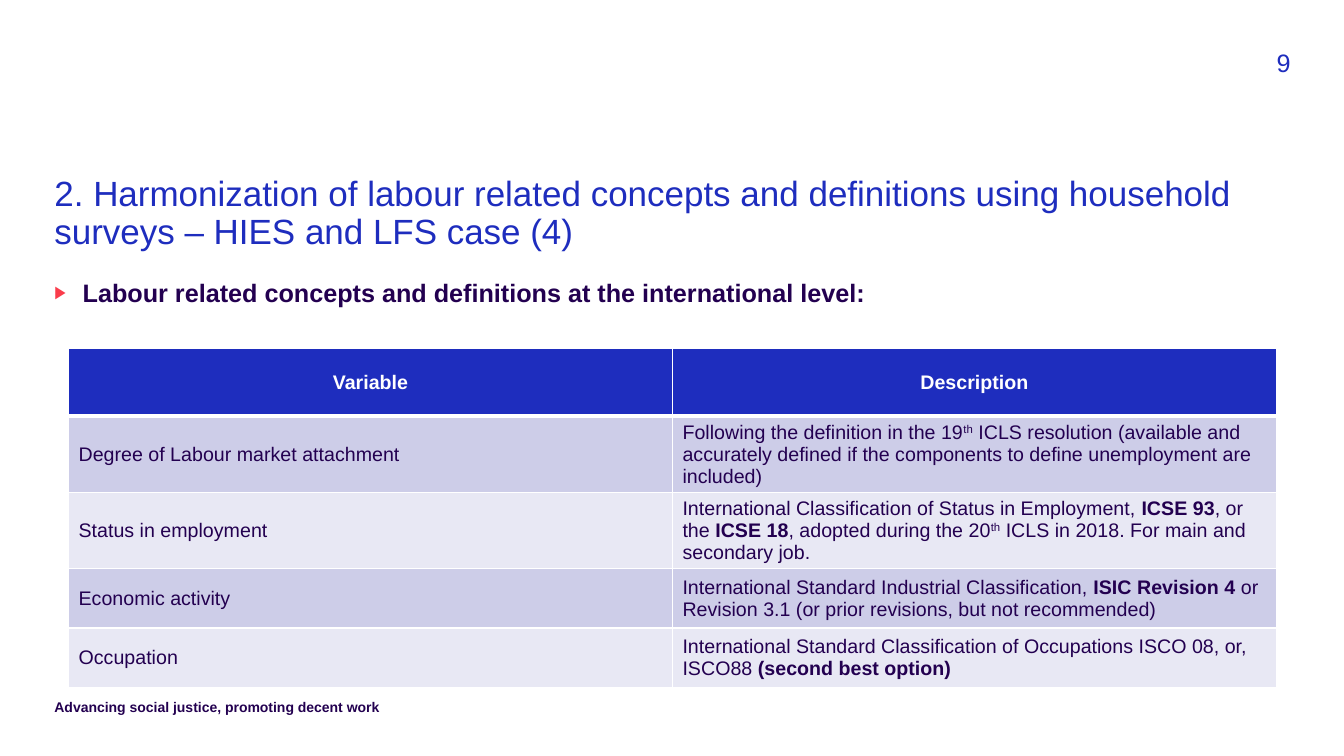
from lxml import etree
from pptx import Presentation
from pptx.dml.color import RGBColor
from pptx.enum import text as t
from pptx.oxml import ns
from pptx.util import Inches, Pt

BLUE, INK, RED, WHITE = "1E2DBE", "230050", "FA3C4B", "FFFFFF"
BANDS = ("CDCDE8", "E8E8F4")
BOLD, SUPER = "bold", "superscript"

VARIABLES = [
    ("Degree of Labour market attachment", [
        ("Following the definition in the 19", None), ("th", SUPER),
        (" ICLS resolution (available and accurately defined if the components "
         "to define unemployment are included)", None)]),
    ("Status in employment", [
        ("International Classification of Status in Employment, ", None),
        ("ICSE 93", BOLD), (", or the ", None), ("ICSE 18", BOLD),
        (", adopted during the 20", None), ("th", SUPER),
        (" ICLS in 2018. For main and secondary job.", None)]),
    ("Economic activity", [
        ("International Standard Industrial Classification, ", None),
        ("ISIC Revision 4", BOLD),
        (" or Revision 3.1 (or prior revisions, but not recommended)", None)]),
    ("Occupation", [
        ("International Standard Classification of Occupations ISCO 08, or, ISCO88 ", None),
        ("(second best option)", BOLD)]),
]


def rgb(value):
    return RGBColor.from_string(value)


def add_xml(parent, tag, **attributes):
    child = etree.SubElement(parent, ns.qn(tag))
    for key, value in attributes.items():
        child.set(key, str(value))
    return child


class SlideBuilder:
    """Holds the current slide and its text and table style."""

    font_name = "Arial"

    def __init__(self, slide):
        self.slide = slide

    def style(self, paragraph, size, color, bold=False):
        font = paragraph.font
        font.name, font.size, font.bold = self.font_name, Pt(size), bold
        font.color.rgb = rgb(color)

    def fill_frame(self, shape, box, words, size, color, bold=False):
        """Place a text shape and write one paragraph without insets."""
        shape.left, shape.top, shape.width, shape.height = map(Inches, box)
        frame = shape.text_frame
        frame.word_wrap = True
        frame.auto_size = t.MSO_AUTO_SIZE.NONE
        frame.vertical_anchor = t.MSO_ANCHOR.TOP
        frame.margin_left = frame.margin_right = frame.margin_top = frame.margin_bottom = 0
        paragraph = frame.paragraphs[0]
        paragraph.text = words
        self.style(paragraph, size, color, bold)
        return paragraph

    def title(self, box, words):
        paragraph = self.fill_frame(self.slide.shapes.title, box, words, 25, BLUE)
        paragraph.alignment = t.PP_ALIGN.LEFT
        paragraph.line_spacing = 0.9

    def label(self, box, words, size, color, bold=False, align=t.PP_ALIGN.LEFT):
        textbox = self.slide.shapes.add_textbox(*map(Inches, box))
        self.fill_frame(textbox, box, words, size, color, bold).alignment = align

    def bullet(self, box, words):
        textbox = self.slide.shapes.add_textbox(*map(Inches, box))
        paragraph = textbox.text_frame.paragraphs[0]
        props = paragraph._p.get_or_add_pPr()
        props.set("marL", str(Inches(0.28)))
        props.set("indent", str(-Inches(0.28)))
        add_xml(add_xml(props, "a:buClr"), "a:srgbClr", val=RED)
        add_xml(props, "a:buSzPct", val=70000)
        add_xml(props, "a:buFont", typeface=self.font_name)
        add_xml(props, "a:buChar", char="▶")
        self.fill_frame(textbox, box, words, 18, INK, bold=True)

    def cell(self, cell, runs, fill, color=INK, bold=False, align=t.PP_ALIGN.LEFT,
             top=1, bottom=1):
        cell.vertical_anchor = t.MSO_ANCHOR.MIDDLE
        props = cell._tc.get_or_add_tcPr()
        for side, width in (("L", 1), ("R", 1), ("T", top), ("B", bottom)):
            line = add_xml(props, f"a:ln{side}", w=Pt(width))
            add_xml(add_xml(line, "a:solidFill"), "a:srgbClr", val=WHITE)
        cell.fill.solid()
        cell.fill.fore_color.rgb = rgb(fill)
        paragraph = cell.text_frame.paragraphs[0]
        paragraph.alignment = align
        self.style(paragraph, 14, color, bold)
        for words, emphasis in runs:
            run = paragraph.add_run()
            run.text = words
            if emphasis == BOLD:
                run.font.bold = True
            elif emphasis == SUPER:
                run._r.get_or_add_rPr().set("baseline", "30000")

    def table(self, box, headings, rows, header_height, row_height):
        table = self.slide.shapes.add_table(
            len(rows) + 1, len(headings), *map(Inches, box)).table
        table.horz_banding = False
        for row in table.rows:
            row.height = Inches(row_height)
        table.rows[0].height = Inches(header_height)
        for column, heading in enumerate(headings):
            self.cell(table.cell(0, column), [(heading, None)], BLUE, WHITE, True,
                      t.PP_ALIGN.CENTER, bottom=3)
        for number, (variable, description) in enumerate(rows, 1):
            band = BANDS[(number - 1) % 2]
            for column, runs in enumerate(([(variable, None)], description)):
                self.cell(table.cell(number, column), runs, band,
                          top=3 if number == 1 else 1)


def main():
    deck = Presentation()
    deck.slide_width, deck.slide_height = Inches(13.33), Inches(7.5)
    page = SlideBuilder(deck.slides.add_slide(deck.slide_layouts[5]))
    page.title((0.54, 1.75, 12.26, 0.79),
               "2. Harmonization of labour related concepts and definitions using "
               "household surveys – HIES and LFS case (4)")
    page.bullet((0.54, 2.75, 11.89, 0.4),
                "Labour related concepts and definitions at the international level:")
    page.label((0.54, 6.93, 6.13, 0.2),
               "Advancing social justice, promoting decent work", 10, INK, bold=True)
    page.label((12.21, 0.47, 0.59, 0.31), "9", 18, BLUE, align=t.PP_ALIGN.RIGHT)
    page.table((0.68, 3.46, 11.98, 3.03), ("Variable", "Description"), VARIABLES,
               header_height=0.67, row_height=0.59)
    deck.save("out.pptx")


if __name__ == "__main__":
    main()
